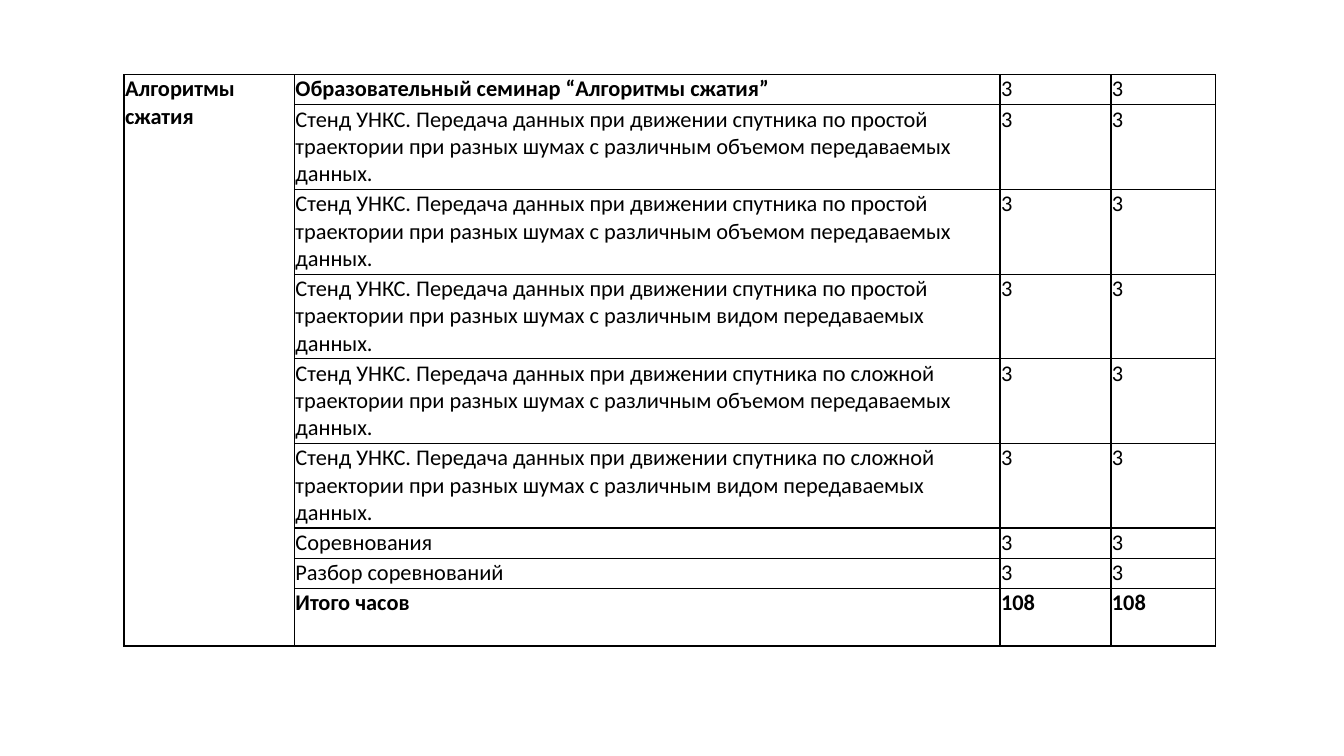
from dataclasses import dataclass

from lxml import etree
from pptx import Presentation
from pptx.dml.color import RGBColor
from pptx.enum.text import MSO_ANCHOR, PP_ALIGN
from pptx.oxml.ns import qn
from pptx.table import Table, _Cell
from pptx.util import Inches, Pt

TOP = MSO_ANCHOR.TOP
LEFT = PP_ALIGN.LEFT

SLIDE_WIDTH = Inches(13.33)
SLIDE_HEIGHT = Inches(7.5)
BLANK_LAYOUT = 6

TABLE_LEFT = 9.23
TABLE_TOP = 9.87
COLUMN_SHARES = (12.68, 52.5, 8.25, 7.8)
LINE_SHARE = 3.6
ROW_PADDING_SHARE = 0.4


@dataclass(frozen=True)
class Theme:
    font: str = "Calibri"
    size: int = 16
    ink: str = "000000"
    border: float = 1
    inset: float = 0.01


@dataclass(frozen=True)
class Lesson:
    topic: str
    hours: str = "3"
    lines: int = 1
    bold_topic: bool = False
    bold_hours: bool = False


THEME = Theme()
SECTION = "Алгоритмы сжатия"


def stand_lesson(path_kind: str, varied: str) -> Lesson:
    return Lesson(
        f"Стенд УНКС. Передача данных при движении спутника по {path_kind} "
        f"траектории при разных шумах с различным {varied} передаваемых данных.",
        lines=3,
    )


LESSONS = (
    Lesson("Образовательный семинар “Алгоритмы сжатия”", bold_topic=True),
    stand_lesson("простой", "объемом"),
    stand_lesson("простой", "объемом"),
    stand_lesson("простой", "видом"),
    stand_lesson("сложной", "объемом"),
    stand_lesson("сложной", "видом"),
    Lesson("Соревнования"),
    Lesson("Разбор соревнований"),
    Lesson("Итого часов", "108", lines=2, bold_topic=True, bold_hours=True),
)


def across(share: float) -> int:
    return round(SLIDE_WIDTH * share / 100)


def down(share: float) -> int:
    return round(SLIDE_HEIGHT * share / 100)


def row_height(lesson: Lesson) -> int:
    return down(LINE_SHARE * lesson.lines + ROW_PADDING_SHARE)


def write(cell: _Cell, text: str, *, bold: bool = False) -> None:
    paragraph = cell.text_frame.paragraphs[0]
    paragraph.alignment = LEFT
    run = paragraph.add_run()
    run.text = text
    run.font.name = THEME.font
    run.font.size = Pt(THEME.size)
    run.font.bold = bold
    run.font.color.rgb = RGBColor.from_string(THEME.ink)


def frame(cell: _Cell) -> None:
    cell.vertical_anchor = TOP
    inset = Inches(THEME.inset)
    cell.margin_left = cell.margin_right = inset
    cell.margin_top = cell.margin_bottom = inset
    properties = cell._tc.get_or_add_tcPr()
    for side in ("a:lnL", "a:lnR", "a:lnT", "a:lnB"):
        border = etree.SubElement(properties, qn(side), w=str(Pt(THEME.border)))
        solid = etree.SubElement(border, qn("a:solidFill"))
        etree.SubElement(solid, qn("a:srgbClr"), val=THEME.ink)
    cell.fill.background()


def fill_schedule(schedule: Table) -> None:
    schedule.first_row = False
    schedule.horz_banding = False
    for column, share in zip(schedule.columns, COLUMN_SHARES):
        column.width = across(share)
    for cell in schedule.iter_cells():
        frame(cell)

    section = schedule.cell(0, 0)
    section.merge(schedule.cell(len(LESSONS) - 1, 0))
    write(section, SECTION, bold=True)
    for index, lesson in enumerate(LESSONS):
        schedule.rows[index].height = row_height(lesson)
        write(schedule.cell(index, 1), lesson.topic, bold=lesson.bold_topic)
        for hours_column in (2, 3):
            write(schedule.cell(index, hours_column), lesson.hours, bold=lesson.bold_hours)


def main() -> None:
    deck = Presentation()
    deck.slide_width = SLIDE_WIDTH
    deck.slide_height = SLIDE_HEIGHT
    slide = deck.slides.add_slide(deck.slide_layouts[BLANK_LAYOUT])
    schedule = slide.shapes.add_table(
        len(LESSONS), len(COLUMN_SHARES),
        across(TABLE_LEFT), down(TABLE_TOP),
        across(sum(COLUMN_SHARES)), sum(map(row_height, LESSONS)),
    ).table
    fill_schedule(schedule)
    deck.save("out.pptx")


if __name__ == "__main__":
    main()
